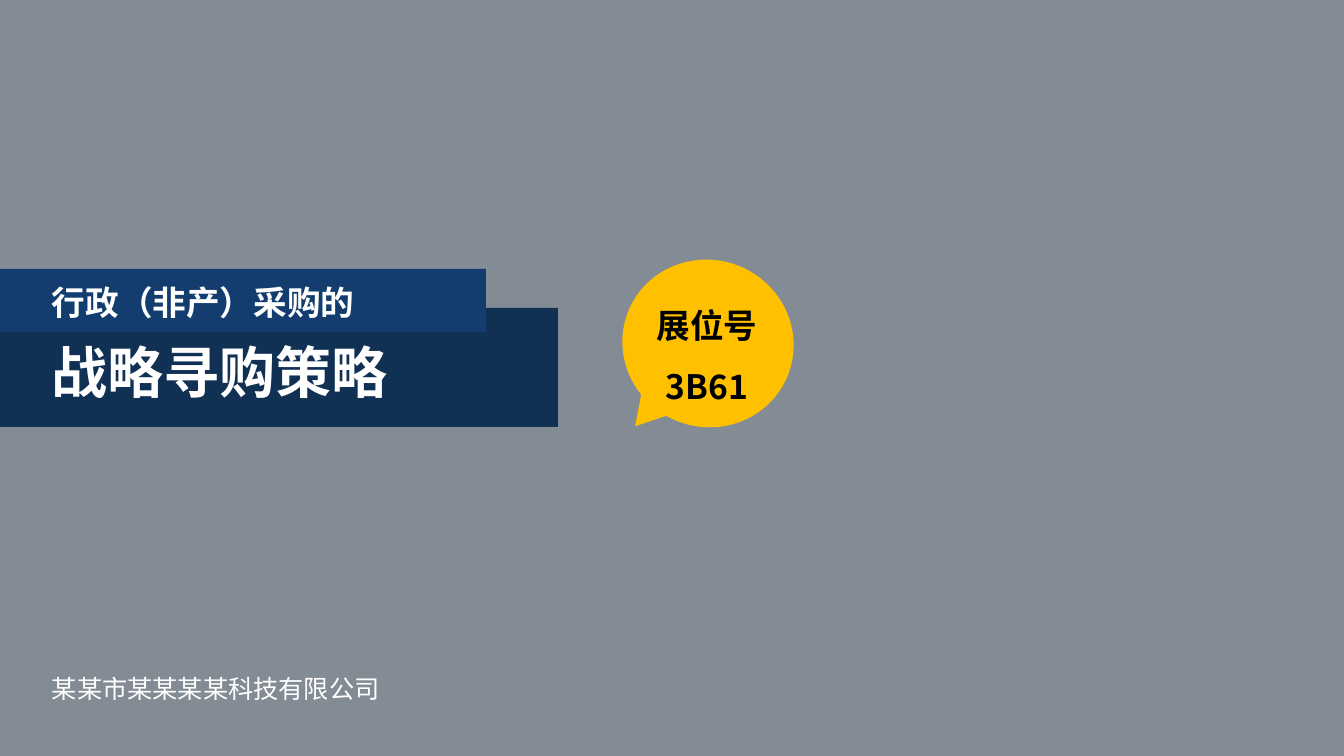
from lxml.etree import SubElement
from pptx import Presentation
from pptx.dml.color import RGBColor
from pptx.enum.shapes import MSO_SHAPE as Shape
from pptx.enum.text import PP_ALIGN as Align
from pptx.oxml.ns import qn
from pptx.util import Pt

WIDE, HIGH = 1344, 756
SCALE = 914400 / 100.8
INK = RGBColor(0x09, 0x1A, 0x2D)
NAVY = RGBColor(0x10, 0x31, 0x54)
BLUE = RGBColor(0x13, 0x3D, 0x6F)
GOLD = RGBColor(0xFF, 0xC0, 0x00)
WHITE = RGBColor(0xFF, 0xFF, 0xFF)
BLACK = RGBColor(0x00, 0x00, 0x00)
HAN = "Noto Sans CJK SC"
SANS = "TeX Gyre Adventor"


def px(*sizes):
    return [round(size * SCALE) for size in sizes]


def add_block(slide, kind, box, color):
    block = slide.shapes.add_shape(kind, *px(*box))
    block.shadow.inherit = False
    block.fill.solid()
    block.fill.fore_color.rgb = color
    block.line.fill.background()
    return block


def add_text(slide, box, text, size, face, color, bold=True,
             wrap=True, align=Align.LEFT, pitch=1.0):
    frame = slide.shapes.add_textbox(*px(*box)).text_frame
    frame.word_wrap = wrap
    para = frame.paragraphs[0]
    para.text = text
    para.alignment = align
    para.line_spacing = pitch
    font = para.font
    font.size, font.bold = Pt(size), bold
    font.color.rgb = color
    font.name = face
    SubElement(font._element, qn("a:ea")).set("typeface", HAN)


# Half-clear dark veil over the white page
def add_veil(slide, box):
    veil = add_block(slide, Shape.RECTANGLE, box, INK)
    tint = veil._element.spPr.find(".//" + qn("a:srgbClr"))
    SubElement(tint, qn("a:alpha")).set("val", "50000")


# Two overlapping bands with the heading
def add_title(slide, box):
    x, y, w, h = box
    add_block(slide, Shape.RECTANGLE, (x, y + 39, w, h - 39), NAVY)
    add_block(slide, Shape.RECTANGLE, (x, y, w - 72, 63), BLUE)
    add_text(slide, (x + 42, y + 71, 449, 72), "战略寻购策略",
             40, "Arial", WHITE, pitch=0.9)
    add_text(slide, (x + 42, y + 8, 370, 50), "行政（非产）采购的",
             24, SANS, WHITE)


# Tilted speech bubble with the booth number
def add_badge(slide, box):
    x, y, w, h = box
    bubble = add_block(slide, Shape.OVAL_CALLOUT, box, GOLD)
    bubble.rotation = 22.4
    add_text(slide, (x + 24, y + 20, 122, 125), "展位号3B61",
             24, HAN, BLACK, align=Align.CENTER, pitch=1.5)


# Company line at the foot
def add_foot(slide, box):
    add_text(slide, box, "某某市某某某某科技有限公司", 18, SANS, WHITE,
             bold=False, wrap=False)


def main():
    deck = Presentation()
    deck.slide_width, deck.slide_height = px(WIDE, HIGH)
    slide = deck.slides.add_slide(deck.slide_layouts[6])
    add_veil(slide, (0, 0, WIDE, HIGH))
    add_title(slide, (0, 269, 558, 158))
    add_badge(slide, (622, 260, 172, 167))
    add_foot(slide, (42, 668, 351, 40))
    deck.save("out.pptx")


if __name__ == "__main__":
    main()
